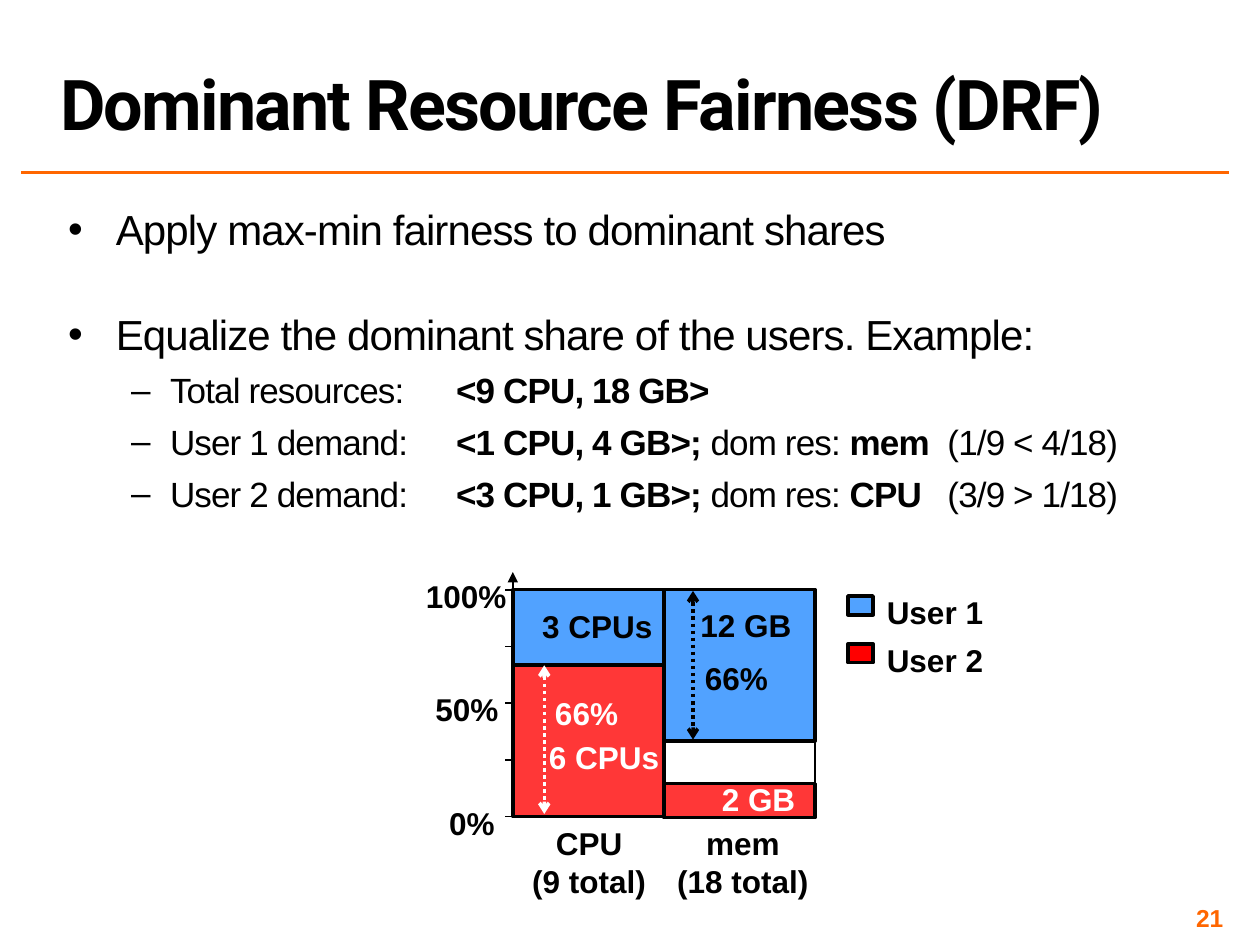
from pptx import Presentation
from pptx.dml.color import RGBColor
from pptx.enum.dml import MSO_LINE
from pptx.enum.shapes import MSO_CONNECTOR, MSO_SHAPE
from pptx.enum.text import MSO_ANCHOR, PP_ALIGN
from pptx.oxml.ns import qn
from pptx.util import Inches, Pt
from lxml.etree import SubElement

BLACK, WHITE, ORANGE = "000000", "FFFFFF", "FF6600"
USER_1, USER_2, USER_2_KEY = "51A2FF", "FF3737", "FF0000"


def paint(target, color):
    """Set a fill, line or font to a hex colour."""
    fill = target if hasattr(target, "solid") else target.fill
    fill.solid()
    fill.fore_color.rgb = RGBColor.from_string(color)


def style(run, size, color=BLACK, bold=True, font="Arial", spacing=None):
    """Format one run."""
    run.font.name, run.font.size, run.font.bold = font, Pt(size), bold
    paint(run.font, color)
    if spacing is not None:
        run.font._element.set("spc", str(int(spacing * 100)))


def add_frame(slide, left, top, width, height, margin=None, wrap=True):
    """Add a text box and return its frame."""
    frame = slide.shapes.add_textbox(left, top, width, height).text_frame
    frame.word_wrap = wrap
    if margin is not None:
        frame.margin_left = frame.margin_right = margin
        frame.margin_top = frame.margin_bottom = margin
    return frame


def add_label(slide, text, left, top, width, color=BLACK, height=Inches(0.4), wrap=True):
    """Add a centred bold label."""
    frame = add_frame(slide, left, top, width, height, wrap=wrap)
    frame.text = text
    for paragraph in frame.paragraphs:
        paragraph.alignment = PP_ALIGN.CENTER
        style(paragraph.runs[0], 18, color)


def add_box(slide, left, top, width, height, color, weight=2):
    """Add an outlined rectangle."""
    box = slide.shapes.add_shape(MSO_SHAPE.RECTANGLE, left, top, width, height)
    box.shadow.inherit = False
    paint(box.fill, color)
    paint(box.line, BLACK)
    box.line.width = Pt(weight)


def add_line(slide, x1, y1, x2, y2, color=BLACK, weight=1, dash=None, head=None, tail=None):
    """Add a straight line with optional dash and arrowheads."""
    line = slide.shapes.add_connector(MSO_CONNECTOR.STRAIGHT, x1, y1, x2, y2)
    paint(line.line, color)
    line.line.width = Pt(weight)
    if dash:
        line.line.dash_style = dash
    properties = line._element.spPr
    for tag, kind in (("a:headEnd", head), ("a:tailEnd", tail)):
        if kind:
            SubElement(properties.find(qn("a:ln")), qn(tag), type=kind)
    SubElement(properties, qn("a:effectLst"))


def add_title(slide, left, top, width, height):
    """Place the title and the rule below it."""
    frame = add_frame(slide, left, top, width, height)
    frame.vertical_anchor = MSO_ANCHOR.BOTTOM
    frame.text = "Dominant Resource Fairness (DRF)"
    frame.paragraphs[0].line_spacing = 0.8
    style(frame.paragraphs[0].runs[0], 40, font="Roboto", spacing=-1)
    rule_top = top + height + Inches(0.18)
    add_line(slide, left - Inches(0.21), rule_top, left + width, rule_top, ORANGE, 2)


def add_bullets(slide, left, top, width, height):
    """Place the two points and the aligned example lines."""
    points = [
        (0, 4, [("Apply max-min fairness to dominant shares", False)]),
        (0, 30, [("Equalize the dominant share of the users. Example:", False)]),
        (1, 4, [("Total resources:\t", False), ("<9 CPU, 18 GB>", True)]),
    ]
    for user, demand, resource, shares in (
        ("User 1", "<1 CPU, 4 GB>; ", "mem", "(1/9 < 4/18)"),
        ("User 2", "<3 CPU, 1 GB>; ", "CPU", "(3/9 > 1/18)"),
    ):
        points.append((1, 4, [(f"{user} demand:\t", False), (demand, True),
                              ("dom res: ", False), (resource, True), (f"\t{shares}", False)]))
    levels = [(24, 0.38, 0.38, "•"), (20, 0.81, 0.31, "–")]
    frame = add_frame(slide, left, top, width, height, Inches(0.04))
    for index, (level, before, parts) in enumerate(points):
        size, margin, hanging, bullet = levels[level]
        paragraph = frame.add_paragraph() if index else frame.paragraphs[0]
        paragraph.level, paragraph.line_spacing = level, 0.9
        paragraph.space_before, paragraph.space_after = Pt(before), Pt(4)
        properties = paragraph._p.get_or_add_pPr()
        properties.set("marL", str(Inches(margin)))
        properties.set("indent", str(-Inches(hanging)))
        SubElement(properties, qn("a:buFont"), typeface="Arial")
        SubElement(properties, qn("a:buChar"), char=bullet)
        if level:
            stops = SubElement(properties, qn("a:tabLst"))
            for stop in (3.08, 6.98):
                SubElement(stops, qn("a:tab"), pos=str(Inches(stop)), algn="l")
        for text, bold in parts:
            run = paragraph.add_run()
            run.text = text
            style(run, size, bold=bold, spacing=-0.5)


def add_axis(slide, left, top, height):
    """Draw the percentage axis with its ticks and labels."""
    add_line(slide, left, top + height, left, top - Inches(0.14), tail="triangle")
    for quarter in range(5):
        tick_top = top + height * quarter // 4
        add_line(slide, left, tick_top, left - Inches(0.06), tick_top)
    for index, (text, offset, width) in enumerate(
            (("100%", 0.81, 0.88), ("50%", 0.73, 0.73), ("0%", 0.61, 0.57))):
        label_top = top + height * index // 2 - Inches(0.15)
        add_label(slide, text, left - Inches(offset), label_top, Inches(width), wrap=False)


def add_shares(slide, left, top, width, height):
    """Draw the CPU and memory bars with their shares."""
    bar = width // 2
    memory = left + bar
    third = height // 3
    bottom = top + height
    user_2_memory = Inches(0.27)
    add_box(slide, memory, top, bar, height, WHITE, 1)
    add_box(slide, left, top + third, bar, 2 * third, USER_2)
    add_box(slide, memory, bottom - Inches(0.26), bar, user_2_memory, USER_2)
    add_box(slide, left, top, bar, third, USER_1)
    add_box(slide, memory, top, bar, 2 * third, USER_1)
    add_axis(slide, left, top, height)
    for text, x, y, label_width, color in (
        ("3 CPUs", 0.07, 0.09, 1.2, BLACK),
        ("12 GB", 1.25, 0.08, 1.2, BLACK),
        ("6 CPUs", 0.14, 1.13, 1.17, WHITE),
        ("2 GB", 1.34, 1.46, 1.22, WHITE),
        ("66%", 0.22, 0.78, 0.73, WHITE),
        ("66%", 1.41, 0.5, 0.73, BLACK),
    ):
        add_label(slide, text, left + Inches(x), top + Inches(y), Inches(label_width), color)
    for x, y, color in ((0.25, 0.6, WHITE), (1.43, 0.01, BLACK)):
        arrow_left, arrow_top = left + Inches(x), top + Inches(y)
        add_line(slide, arrow_left, arrow_top, arrow_left, arrow_top + Inches(1.18), color, 2,
                 MSO_LINE.ROUND_DOT, "arrow", "arrow")
    for text, x, label_width in (("CPU\n(9 total)", 0.02, 1.17), ("mem\n(18 total)", 1.15, 1.35)):
        add_label(slide, text, left + Inches(x), bottom + Inches(0.01), Inches(label_width),
                  height=Inches(0.71))


def add_legend(slide, left, top):
    """Place the colour key of the two users."""
    for index, (user, color) in enumerate((("User 1", USER_1), ("User 2", USER_2_KEY))):
        row_top = top + index * Inches(0.38)
        add_box(slide, left, row_top, Inches(0.2), Inches(0.15), color)
        add_label(slide, user, left + Inches(0.2), row_top - Inches(0.07), Inches(0.98), wrap=False)


def add_page_number(slide, left, top, width, height):
    """Place the page number."""
    frame = add_frame(slide, left, top, width, height, Inches(0.04))
    frame.vertical_anchor = MSO_ANCHOR.MIDDLE
    frame.text = "21"
    frame.paragraphs[0].alignment = PP_ALIGN.RIGHT
    style(frame.paragraphs[0].runs[0], 14, ORANGE)


def main():
    """Build and save the slide."""
    deck = Presentation()
    deck.slide_width, deck.slide_height = Inches(10), Inches(7.5)
    slide = deck.slides.add_slide(deck.slide_layouts[6])
    add_title(slide, Inches(0.38), Inches(0.02), Inches(9.37), Inches(1.17))
    add_bullets(slide, Inches(0.5), Inches(1.62), Inches(9), Inches(2.71))
    add_shares(slide, Inches(4.07), Inches(4.68), Inches(2.4), Inches(1.8))
    add_legend(slide, Inches(6.73), Inches(4.73))
    add_page_number(slide, Inches(7.42), Inches(7.17), Inches(2.33), Inches(0.23))
    deck.save("out.pptx")


if __name__ == "__main__":
    main()
